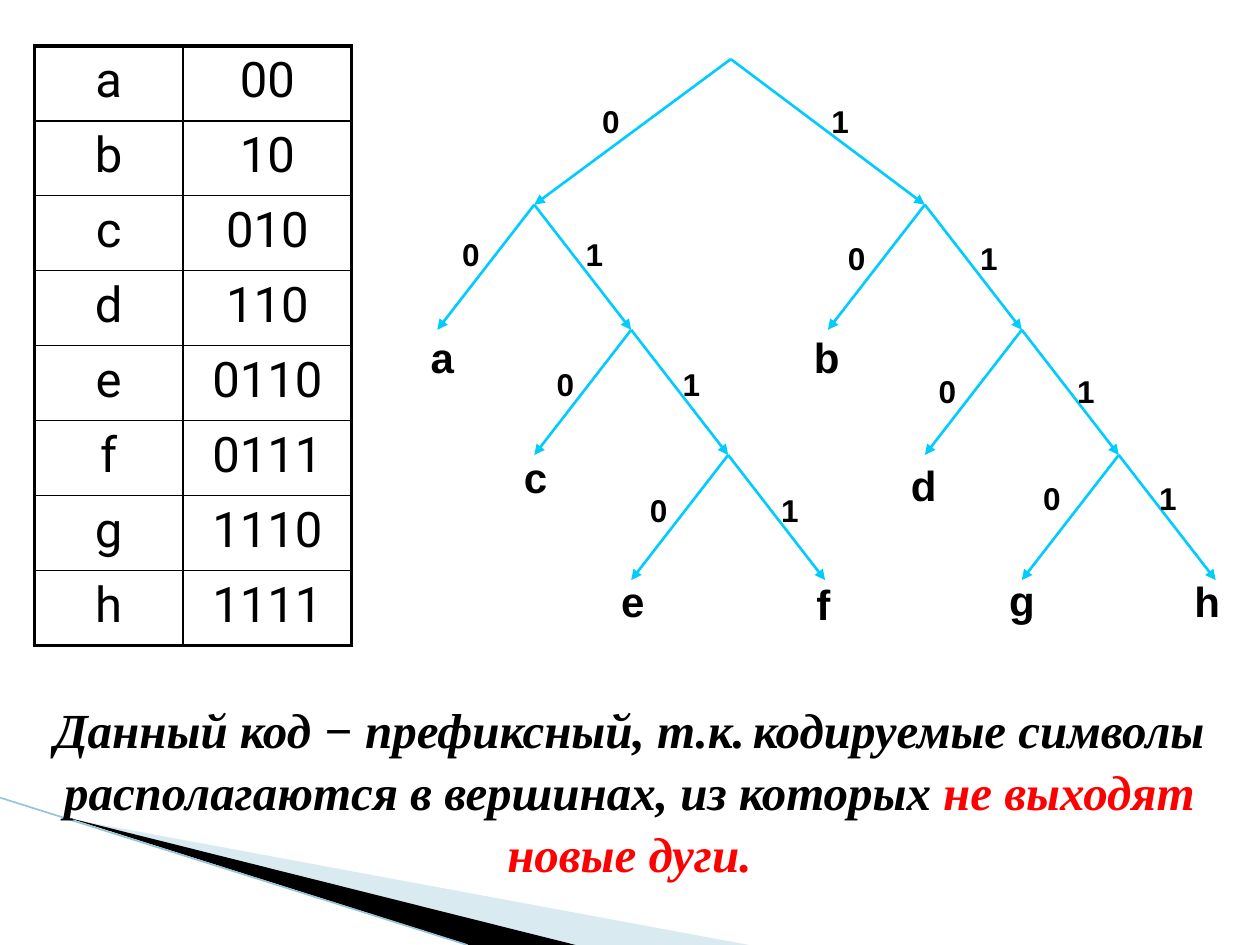
from pptx import Presentation
from pptx.dml.color import RGBColor
from pptx.enum.shapes import MSO_CONNECTOR as Connector
from pptx.enum.text import PP_ALIGN as Align
from pptx.oxml.ns import qn
from pptx.util import Pt
from lxml.etree import SubElement

BLACK = RGBColor(0, 0, 0)
RED = RGBColor(0xFF, 0, 0)
ARC_BLUE = RGBColor(0, 0xCC, 0xFF)
PALE_BLUE = RGBColor(0xA0, 0xCB, 0xDC)
EDGE_BLUE = RGBColor(0x97, 0xC5, 0xD8)

deck = Presentation()
deck.slide_width, deck.slide_height = Pt(720), Pt(540)
slide = deck.slides.add_slide(deck.slide_layouts[6])
shapes = slide.shapes


def add_line(start, end, color, width):
    line = shapes.add_connector(Connector.STRAIGHT, *map(Pt, start + end))
    line.line.color.rgb = color
    line.line.width = Pt(width)
    SubElement(line.element.spPr, qn("a:effectLst"))
    return line


def add_label(text, left, top, size):
    """Put a bold tree label at the given corner."""
    label = shapes.add_textbox(Pt(left), Pt(top), Pt(39.6), Pt(size * 1.2 + 7.2))
    label.text_frame.word_wrap = True
    label.text_frame.text = text
    font = label.text_frame.paragraphs[0].runs[0].font
    font.name, font.size, font.bold = "Arial", Pt(size), True
    font.color.rgb = BLACK


# Corner decoration
wedges = [
    (PALE_BLUE, 40, [(39.6, 468), (428.4, 540), (328.3, 540)]),
    (BLACK, 100, [(38.2, 467.3), (329, 540), (267.8, 540)]),
]
for color, opacity, corners in wedges:
    outline = shapes.build_freeform(*corners[0], scale=Pt(1))
    outline.add_line_segments(corners[1:], close=True)
    wedge = outline.convert_to_shape()
    wedge.shadow.inherit = False
    wedge.line.fill.background()
    wedge.fill.solid()
    wedge.fill.fore_color.rgb = color
    if opacity < 100:
        rgb = wedge.element.spPr.find(".//" + qn("a:srgbClr"))
        SubElement(rgb, qn("a:alpha"), val=str(opacity * 1000))
add_line((0, 455.8), (267.1, 540), EDGE_BLUE, 0.95)

# Code table: thick frame, thin inner rules
codes = {"a": "00", "b": "10", "c": "010", "d": "110",
         "e": "0110", "f": "0111", "g": "1110", "h": "1111"}
ROW_HEIGHT = 42.85
code_table = shapes.add_table(len(codes), 2, Pt(19.6), Pt(26.2), Pt(181.4),
                              Pt(ROW_HEIGHT * len(codes))).table
code_table.first_row = code_table.horz_banding = False
code_table.columns[0].width = Pt(85)
code_table.columns[1].width = Pt(96.4)
for row, pair in enumerate(codes.items()):
    code_table.rows[row].height = Pt(ROW_HEIGHT)
    for col, text in enumerate(pair):
        cell = code_table.cell(row, col)
        cell.text_frame.text = text
        paragraph = cell.text_frame.paragraphs[0]
        paragraph.alignment = Align.CENTER
        font = paragraph.runs[0].font
        font.name, font.size = "Roboto", Pt(28)
        font.color.rgb = BLACK
        outer_sides = {"L": col == 0, "R": col == 1,
                       "T": row == 0, "B": row == len(codes) - 1}
        for side, is_outer in outer_sides.items():
            border = SubElement(cell._tc.get_or_add_tcPr(), qn(f"a:ln{side}"),
                                w=str(Pt(2.25 if is_outer else 1)))
            fill = SubElement(border, qn("a:solidFill"))
            SubElement(fill, qn("a:srgbClr"), val=str(BLACK))
        cell.fill.background()

# Code tree: the root, then two chains of three forks each
root = (417.6, 33.8)
STEP_X, STEP_Y = 55.4, 71.5
arcs = []
for chain_left in (305.3, 528.5):
    arcs.append((root, (chain_left, 117)))
    for level in range(3):
        x, y = chain_left + level * STEP_X, 117 + level * STEP_Y
        arcs += [((x, y), (x + side * STEP_X, y + STEP_Y)) for side in (-1, 1)]
for start, end in arcs:
    arc = add_line(start, end, ARC_BLUE, 1.5)
    SubElement(arc.line._get_or_add_ln(), qn("a:tailEnd"), type="triangle")

# Left of the 0, left of the 1, and their shared top, fork by fork
bit_places = [
    (337, 468, 54.7),
    (257, 327.6, 131), (311, 383, 204.8), (364.3, 439.2, 277.2),
    (477.4, 553, 133.2), (529.2, 608.4, 208.8), (589, 655.2, 270),
]
for zero_left, one_left, top in bit_places:
    add_label("0", zero_left, top, 18)
    add_label("1", one_left, top, 18)

leaf_places = {
    "a": (239, 185.8), "b": (458, 185.8), "c": (292.3, 254.2), "d": (513.4, 259.2),
    "e": (347.8, 325.4), "f": (459.4, 326.9), "g": (569.5, 324.7), "h": (675.4, 325.4),
}
for letter, (left, top) in leaf_places.items():
    add_label(letter, left, top, 24)

# Conclusion
conclusion = shapes.add_textbox(Pt(13.7), Pt(394.6), Pt(692), Pt(108))
conclusion.text_frame.word_wrap = True
paragraph = conclusion.text_frame.paragraphs[0]
paragraph.alignment = Align.CENTER
paragraph.line_spacing = 1.05
phrases = [
    ("Данный код − префиксный, т.к.", 28, True, BLACK),
    (" ", 18, False, BLACK),
    ("кодируемые символы располагаются в вершинах, из которых ", 28, True, BLACK),
    ("не выходят новые дуги.", 28, True, RED),
]
for text, size, bold, color in phrases:
    run = paragraph.add_run()
    run.text = text
    font = run.font
    font.name, font.size, font.bold, font.italic = "Times New Roman", Pt(size), bold, True
    font.color.rgb = color

deck.save("out.pptx")
